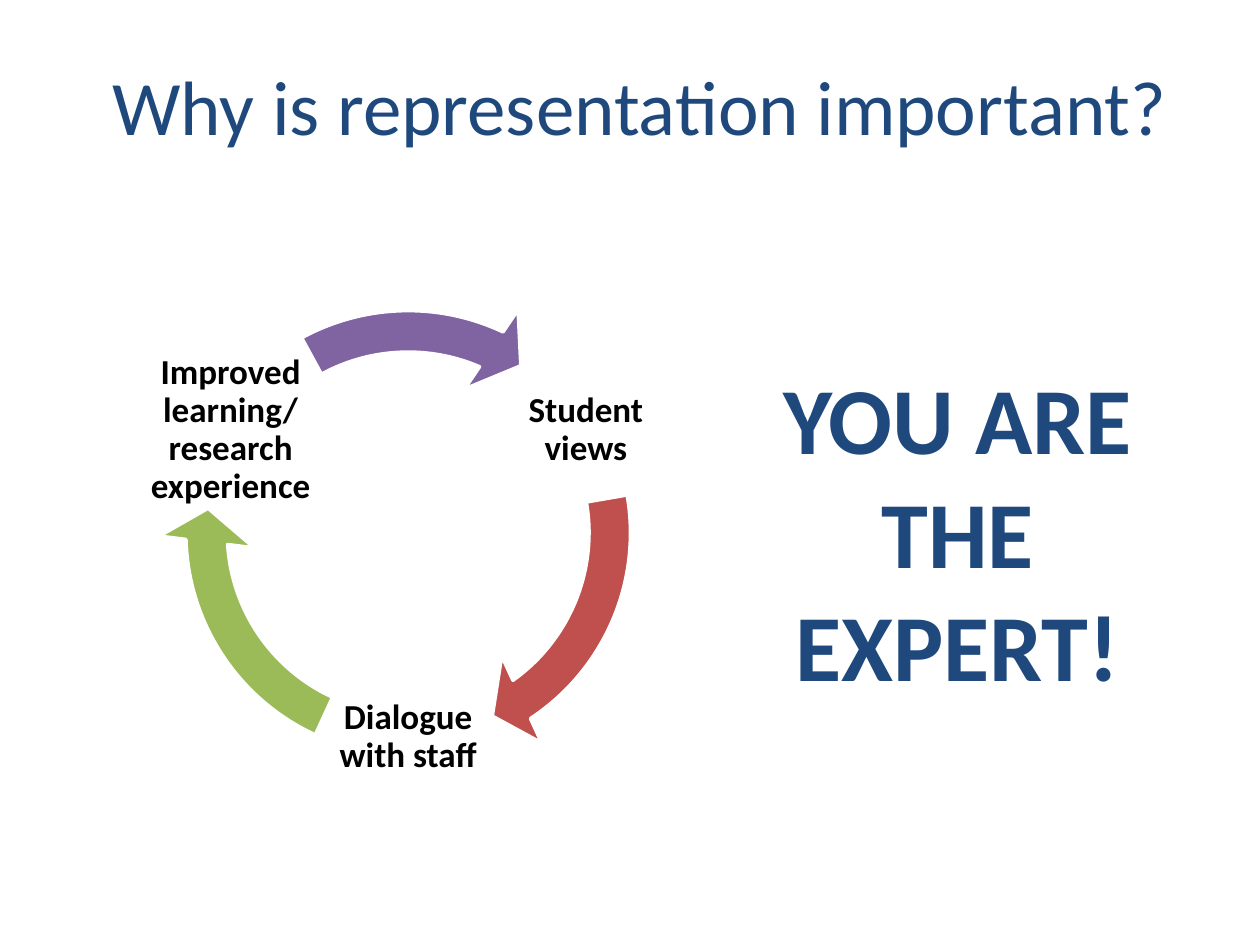
from pptx import Presentation
from pptx.dml.color import RGBColor
from pptx.enum.shapes import MSO_SHAPE
from pptx.enum.text import MSO_ANCHOR, PP_ALIGN
from pptx.util import Inches, Pt

COLORS = {
    "navy": "1F497D",
    "black": "000000",
    "white": "FFFFFF",
    "red": "C0504D",
    "green": "9BBB59",
    "purple": "8064A2",
}
RING = (1.26, 2.25, 3.96, 3.96)
STAGES = [
    ("Student views", (3.99, 2.88, 1.32, 1.07), "red", 350.17, 55.71),
    ("Dialogue with staff", (2.56, 5.16, 1.36, 1.38), "green", 114.69, 177.42),
    ("Improved learning/ research experience", (1.09, 2.8, 1.48, 1.23),
     "purple", 241.36, 294.37),
]


def color(name):
    return RGBColor.from_string(COLORS[name])


def box(values):
    return [Inches(v) for v in values]


def write(sp, text, size, ink="navy", bold=False, anchor=MSO_ANCHOR.MIDDLE,
          inset=0.1, spacing=1.0):
    tf = sp.text_frame
    tf.word_wrap = True
    tf.vertical_anchor = anchor
    tf.margin_left = tf.margin_right = Inches(inset)
    tf.margin_top = tf.margin_bottom = Inches(min(inset, 0.05))
    p = tf.paragraphs[0]
    p.alignment = PP_ALIGN.CENTER
    p.line_spacing = spacing
    r = p.add_run()
    r.text = text
    r.font.name = "Calibri"
    r.font.size = Pt(size)
    r.font.bold = bold
    r.font.color.rgb = color(ink)


def add_arrow(shapes, fill, start, end):
    sp = shapes.add_shape(MSO_SHAPE.CIRCULAR_ARROW, *box(RING))
    sp.shadow.inherit = False
    sp.fill.solid()
    sp.fill.fore_color.rgb = color(fill)
    sp.line.color.rgb = color("white")
    sp.line.width = Pt(2)
    per_degree = 0.6
    values = (0.083, 9.61 * per_degree, end * per_degree, start * per_degree, 0.096)
    for i, value in enumerate(values):
        sp.adjustments[i] = value


def add_cycle(slide):
    shapes = slide.shapes.add_group_shape().shapes
    for text, place, fill, start, end in STAGES:
        label = shapes.add_textbox(*box(place))
        write(label, text, 20, ink="black", bold=True, inset=0.03, spacing=0.9)
        add_arrow(shapes, fill, start, end)


def main():
    prs = Presentation()
    prs.slide_width, prs.slide_height = Inches(10), Inches(7.5)
    slide = prs.slides.add_slide(prs.slide_layouts[5])
    title = slide.shapes.title
    title.left, title.top, title.width, title.height = box((0.67, 0.21, 8.82, 1.25))
    write(title, "Why is representation important?", 44)
    message = slide.shapes.add_textbox(*box((5.55, 2.81, 4.1, 2.83)))
    write(message, "YOU ARE THE EXPERT!", 54, bold=True,
          anchor=MSO_ANCHOR.TOP, inset=0.2)
    add_cycle(slide)
    prs.save("out.pptx")


if __name__ == "__main__":
    main()
